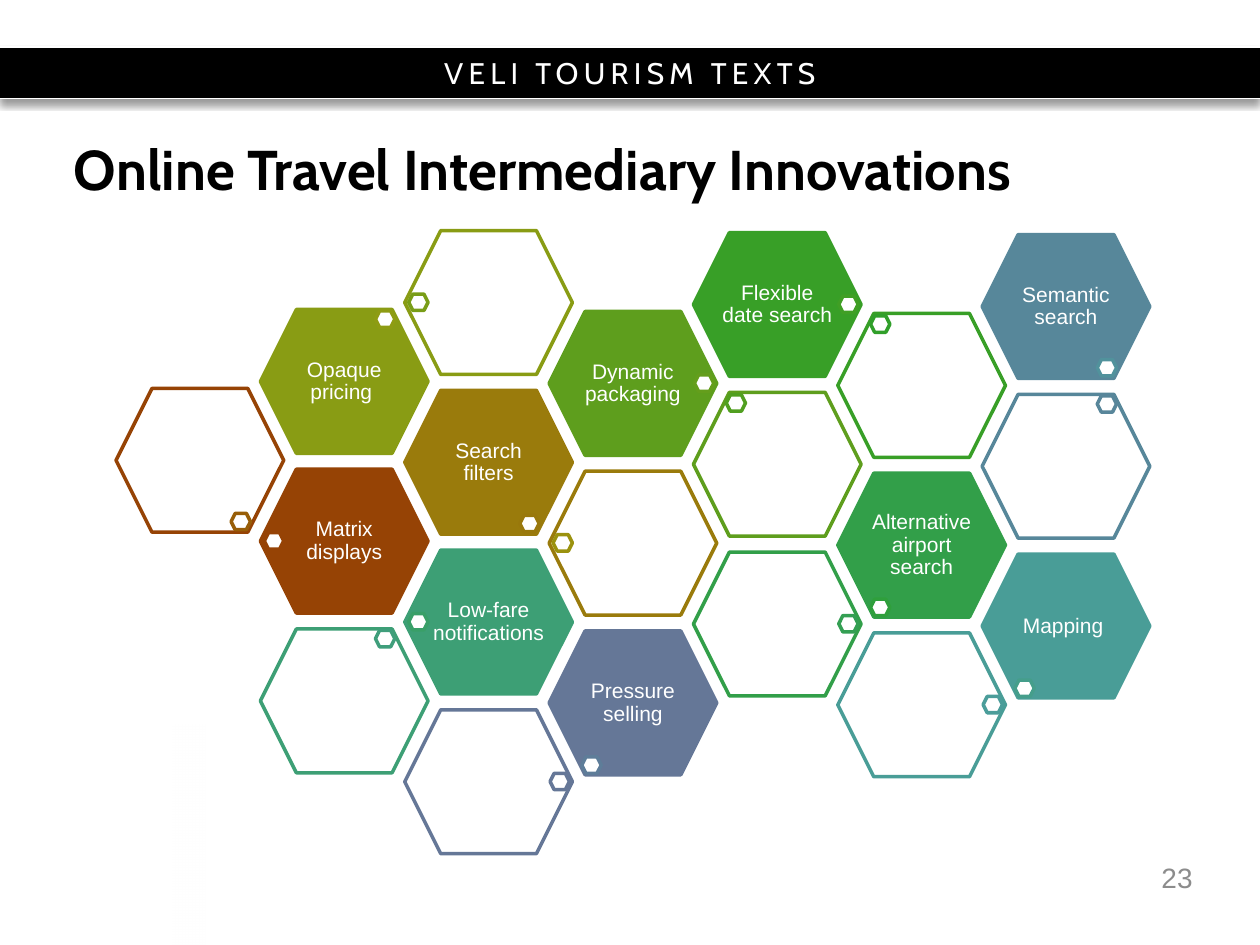
"""Build the slide on online travel intermediary innovations."""
from lxml.etree import SubElement
from pptx import Presentation
from pptx.dml.color import RGBColor
from pptx.enum.shapes import MSO_CONNECTOR as Connector, MSO_SHAPE as Shape
from pptx.enum.text import MSO_ANCHOR as Anchor, PP_ALIGN as Align
from pptx.oxml.ns import qn
from pptx.util import Cm, Pt

COLORS = {
    "black": "000000", "white": "FFFFFF", "number": "8C8C8C",
    "rust": "964305", "rust_badge": "985E08",
    "ochre": "9A7B0C", "ochre_dark": "99780C", "ochre_badge": "9B920F",
    "olive": "899C14", "olive_dark": "8E9C13", "olive_badge": "799D17",
    "leaf": "5E9E1D", "leaf_dark": "649E1C", "leaf_badge": "519F20",
    "green": "389F27", "green_dark": "409F25", "green_badge": "309F2A",
    "emerald": "329F49", "emerald_dark": "2F9F3C", "emerald_badge": "349F53",
    "jade": "3D9F75", "jade_dark": "399F68", "jade_badge": "3F9E7B",
    "teal": "499D97", "teal_dark": "459E8B", "teal_badge": "4B9D9A",
    "steel": "57879A", "steel_dark": "51929C", "steel_badge": "58869A",
    "slate": "657797", "slate_dark": "5E7D99", "slate_badge": "657797",
}
CORNERS = {
    "left": (0.08, 1.28), "right": (2.93, 1.28),
    "top left": (0.66, 0.05), "top right": (2.32, 0.03),
    "bottom left": (0.66, 2.54), "bottom right": (2.32, 2.52),
}
# label, colour, (column, half row, badge corner) of the solid and the outlined tile
INNOVATIONS = [
    ("Matrix displays", "rust", (1, 3, "left"), (0, 2, "bottom right")),
    ("Search filters", "ochre", (2, 2, "bottom right"), (3, 3, "left")),
    ("Opaque pricing ", "olive", (1, 1, "top right"), (2, 0, "left")),
    ("Dynamic packaging", "leaf", (3, 1, "right"), (4, 2, "top left")),
    ("Flexible date search", "green", (4, 0, "right"), (5, 1, "top left")),
    ("Alternative airport search", "emerald", (5, 3, "bottom left"), (4, 4, "right")),
    ("Low-fare notifications ", "jade", (2, 4, "left"), (1, 5, "top right")),
    ("Mapping ", "teal", (6, 4, "bottom left"), (5, 5, "right")),
    ("Semantic search", "steel", (6, 0, "bottom right"), (6, 2, "top right")),
    ("Pressure selling", "slate", (3, 5, "bottom left"), (2, 6, "right")),
]


def color(name):
    """Return the named colour."""
    return RGBColor.from_string(COLORS[name])


def write(shape, text, size, font="Arial", ink="white", bold=False, align=Align.CENTER,
          line_spacing=None, tracking=None, margins=(0.25, 0.13)):
    """Write one formatted paragraph into a shape."""
    frame = shape.text_frame
    frame.word_wrap = True
    frame.vertical_anchor = Anchor.MIDDLE
    frame.margin_left = frame.margin_right = Cm(margins[0])
    frame.margin_top = frame.margin_bottom = Cm(margins[1])
    paragraph = frame.paragraphs[0]
    paragraph.alignment = align
    paragraph.line_spacing = line_spacing
    run = paragraph.add_run()
    run.text = text
    run.font.name, run.font.size, run.font.bold = font, Pt(size), bold
    run.font.color.rgb = color(ink)
    if tracking:
        run.font._element.set("spc", str(tracking * 100))


class InnovationSlide:
    """Holds the style and the current slide."""

    heading_font = "Cabin"
    tile_size = (3.38, 2.9)
    badge_size = (0.39, 0.33)

    def __init__(self, slide):
        """Keep the slide to draw on."""
        self.slide = slide

    def shape(self, kind, box, fill, line=None, alpha=None):
        """Add a filled preset shape."""
        shape = self.slide.shapes.add_shape(kind, *map(Cm, box))
        shape.shadow.inherit = False
        shape.fill.solid()
        shape.fill.fore_color.rgb = color(fill)
        if line:
            shape.line.color.rgb = color(line)
            shape.line.width = Pt(2)
        else:
            shape.line.fill.background()
        if alpha:
            fill_color = shape._element.spPr.find(qn("a:solidFill"))[0]
            SubElement(fill_color, qn("a:alpha"), val=str(alpha * 1000))
        return shape

    def fade(self, box):
        """Add a strip that fades from clear to white."""
        strip = self.shape(Shape.RECTANGLE, box, "white")
        strip.fill.gradient()
        strip.fill.gradient_angle = 0
        for stop in strip.fill.gradient_stops:
            stop.color.rgb = color("white")
        first_color = next(strip._element.spPr.iter(qn("a:srgbClr")))
        SubElement(first_color, qn("a:alpha"), val="0")

    def text(self, text, box, **style):
        """Add a text box."""
        write(self.slide.shapes.add_textbox(*map(Cm, box)), text, **style)

    def rule(self, top):
        """Add a thin white line across the slide."""
        line = self.slide.shapes.add_connector(
            Connector.STRAIGHT, Cm(0), Cm(top), Cm(25.4), Cm(top))
        line.line.color.rgb = color("white")
        line.line.width = Pt(0.75)
        SubElement(line._element.spPr, qn("a:effectLst"))

    def banner(self, text):
        """Add the black band with its shadow and edge lines."""
        top, height = 0.95, 1.03
        band = self.shape(Shape.RECTANGLE, (0, top, 25.4, height), "black")
        shadow = SubElement(
            band._element.spPr.find(qn("a:effectLst")), qn("a:outerShdw"),
            blurRad=str(Pt(4)), dist=str(Pt(3)), dir="5400000", rotWithShape="0")
        shadow_color = SubElement(shadow, qn("a:srgbClr"), val=COLORS["black"])
        SubElement(shadow_color, qn("a:alpha"), val="40000")
        write(band, text, size=17, font=self.heading_font, tracking=3)
        self.rule(top)
        self.rule(top + height)

    def tile(self, place, fill, line, badge_line, label=None):
        """Add a hexagon on the honeycomb with its label and corner badge."""
        column, half_row, corner = place
        left = 2.34 + 2.91 * column
        top = 4.61 + 1.61 * half_row + 0.02 * column
        alpha = None if label else 90
        self.shape(Shape.HEXAGON, (left, top, *self.tile_size), fill, line, alpha)
        if label:
            self.text(label, (left + 0.52, top + 0.45, 2.34, 2.01), size=12,
                      line_spacing=0.9, margins=(0, 0.05))
        across, down = CORNERS[corner]
        self.shape(Shape.HEXAGON, (left + across, top + down, *self.badge_size),
                   "white", badge_line)


def main():
    """Build and save the presentation."""
    presentation = Presentation()
    presentation.slide_width, presentation.slide_height = Cm(25.4), Cm(19.05)
    page = InnovationSlide(presentation.slides.add_slide(presentation.slide_layouts[6]))
    page.banner("VELI TOURISM TEXTS")
    page.fade((3.48, 14.6, 0.66, 4.45))
    page.text("Online Travel Intermediary Innovations", (1.24, 2.89, 23.06, 1.22),
              size=32, font=page.heading_font, ink="black", bold=True,
              align=Align.LEFT, line_spacing=Pt(32))
    for label, hue, solid, outlined in INNOVATIONS:
        solid_badge = f"{hue}_dark" if f"{hue}_dark" in COLORS else hue
        page.tile(solid, hue, hue, solid_badge, label)
        page.tile(outlined, "white", hue, f"{hue}_badge")
    page.text("23", (18.37, 17.18, 5.92, 1.02), size=16, ink="number", align=Align.RIGHT)
    presentation.save("out.pptx")


if __name__ == "__main__":
    main()
